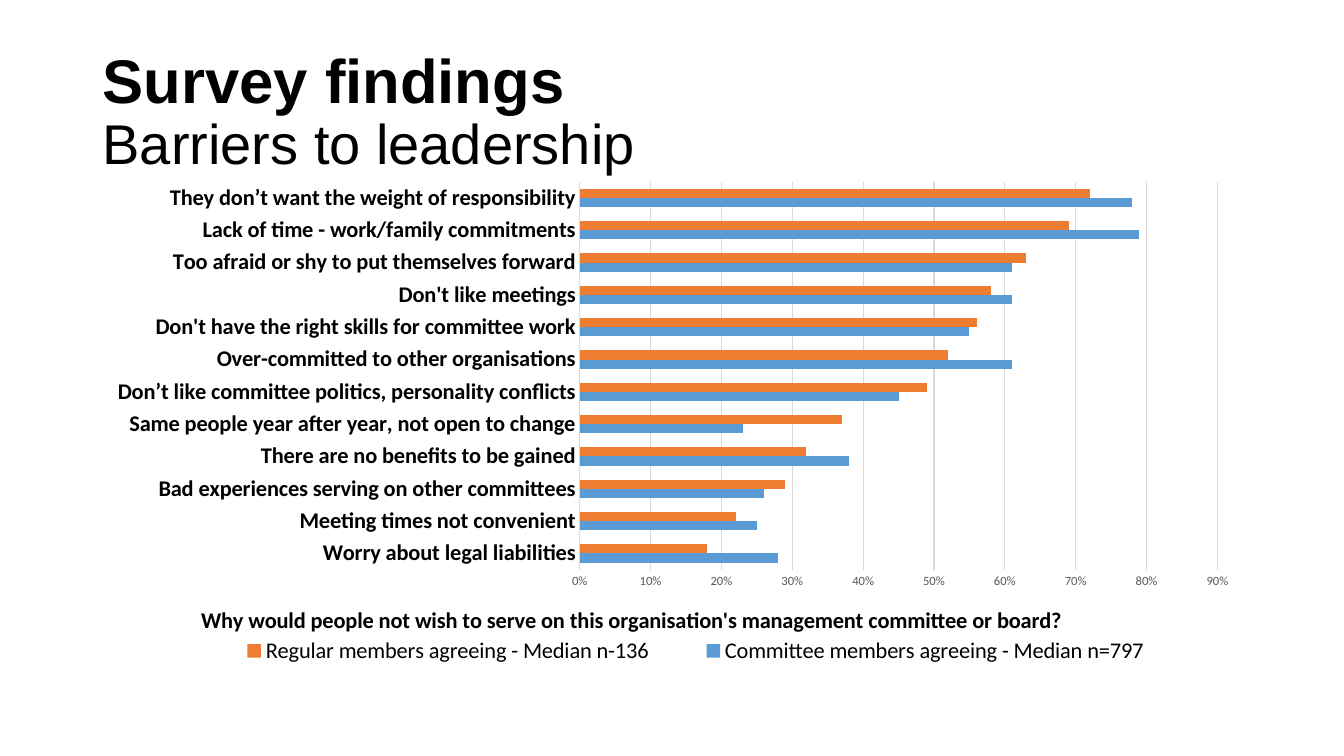
from dataclasses import dataclass

from lxml.etree import SubElement
from pptx import Presentation
from pptx.chart.data import CategoryChartData as ChartData
from pptx.dml.color import RGBColor
from pptx.enum.chart import XL_CHART_TYPE as ChartType
from pptx.enum.chart import XL_LEGEND_POSITION as LegendPosition
from pptx.enum.chart import XL_TICK_MARK as TickMark
from pptx.enum.text import MSO_ANCHOR as Anchor
from pptx.oxml.ns import qn
from pptx.util import Emu, Pt

EMU_PER_PX = 9144  # 100 px to the inch


@dataclass(frozen=True)
class Theme:
    heading_font: str = "Arial"
    chart_font: str = "Calibri"
    ink: str = "000000"
    muted: str = "595959"
    grid: str = "D9D9D9"
    committee: str = "5B9BD5"
    regular: str = "ED7D31"
    heading_size: int = 44
    subheading_size: int = 40
    label_size: int = 16
    base_size: int = 10
    scale_size: int = 9
    rule_width: float = 0.75


THEME = Theme()

QUESTION = ("Why would people not wish to serve on this organisation's "
            "management committee or board?")

# Barrier, committee members agreeing, regular members agreeing (bottom to top)
BARRIERS = [
    ("Worry about legal liabilities", 0.28, 0.18),
    ("Meeting times not convenient", 0.25, 0.22),
    ("Bad experiences serving on other committees", 0.26, 0.29),
    ("There are no benefits to be gained", 0.38, 0.32),
    ("Same people year after year, not open to change", 0.23, 0.37),
    ("Don’t like committee politics, personality conflicts", 0.45, 0.49),
    ("Over-committed to other organisations", 0.61, 0.52),
    ("Don't have the right skills for committee work", 0.55, 0.56),
    ("Don't like meetings", 0.61, 0.58),
    ("Too afraid or shy to put themselves forward", 0.61, 0.63),
    ("Lack of time - work/family commitments", 0.79, 0.69),
    ("They don’t want the weight of responsibility", 0.78, 0.72),
]


def px(*lengths):
    return [Emu(length * EMU_PER_PX) for length in lengths]


def style_font(font, size, color=THEME.ink, face=THEME.chart_font, bold=False):
    font.size, font.name, font.bold = Pt(size), face, bold
    font.color.rgb = RGBColor.from_string(color)


def add_text(paragraph, text, **style):
    run = paragraph.add_run()
    run.text = text
    style_font(run.font, **style)


def style_rule(line):
    line.color.rgb = RGBColor.from_string(THEME.grid)
    line.width = Pt(THEME.rule_width)


def place_part(chart, part, index, inner=False, **fractions):
    """Set a chart part's place as fractions of the chart area."""
    parent = chart.element.xpath(f".//{part}")[0]
    for automatic in parent.findall(qn("c:layout")):
        parent.remove(automatic)
    layout = parent.makeelement(qn("c:layout"))
    parent.insert(index, layout)
    manual = SubElement(layout, qn("c:manualLayout"))
    if inner:
        SubElement(manual, qn("c:layoutTarget")).set("val", "inner")
    for key in ("x", "y"):
        SubElement(manual, qn(f"c:{key}Mode")).set("val", "edge")
    for key, value in fractions.items():
        SubElement(manual, qn(f"c:{key}")).set("val", str(value))


def add_heading(slide):
    frame = slide.shapes.add_textbox(*px(92, 40, 1150, 145)).text_frame
    frame.word_wrap = True
    frame.vertical_anchor = Anchor.MIDDLE
    heading = frame.paragraphs[0]
    heading.line_spacing = 0.9
    add_text(heading, "Survey findings", size=THEME.heading_size,
             face=THEME.heading_font, bold=True)
    heading.add_line_break()
    add_text(heading, "Barriers to leadership", size=THEME.subheading_size,
             face=THEME.heading_font)


def add_barriers_chart(slide):
    labels, committee, regular = zip(*BARRIERS)
    data = ChartData(number_format="0%")
    data.categories = labels
    data.add_series("Committee members agreeing - Median n=797", committee)
    data.add_series("Regular members agreeing - Median n-136", regular)
    chart = slide.shapes.add_chart(
        ChartType.BAR_CLUSTERED, *px(92, 170, 1150, 520), data).chart
    chart.has_title = False
    style_font(chart.font, THEME.base_size)

    # Bars
    plot = chart.plots[0]
    plot.gap_width, plot.overlap, plot.vary_by_categories = 150, 0, False
    for series, color in zip(plot.series, (THEME.committee, THEME.regular)):
        series.format.fill.solid()
        series.format.fill.fore_color.rgb = RGBColor.from_string(color)
        series.invert_if_negative = False

    # Barrier axis
    barrier_axis = chart.category_axis
    barrier_axis.major_tick_mark = TickMark.NONE
    barrier_axis.has_major_gridlines = False
    style_rule(barrier_axis.format.line)
    style_font(barrier_axis.tick_labels.font, THEME.label_size, bold=True)

    # Agreement axis
    agreement_axis = chart.value_axis
    agreement_axis.minimum_scale, agreement_axis.maximum_scale = 0, 0.9
    agreement_axis.major_unit = 0.1
    agreement_axis.major_tick_mark = TickMark.NONE
    agreement_axis.format.line.fill.background()
    style_rule(agreement_axis.major_gridlines.format.line)
    scale_labels = agreement_axis.tick_labels
    scale_labels.number_format = "0%"
    scale_labels.number_format_is_linked = False
    style_font(scale_labels.font, THEME.scale_size, THEME.muted)
    question = agreement_axis.axis_title.text_frame.paragraphs[0]
    add_text(question, QUESTION, size=THEME.label_size, bold=True)

    # Legend
    chart.has_legend = True
    chart.legend.position = LegendPosition.BOTTOM
    chart.legend.include_in_layout = False
    style_font(chart.legend.font, THEME.label_size)

    # Places of the chart parts
    place_part(chart, "c:plotArea", 0, inner=True, x=0.42, y=0.02, w=0.55, h=0.74)
    place_part(chart, "c:valAx/c:title", 1, x=0.09, y=0.82)
    place_part(chart, "c:legend", 1, x=0.09, y=0.87, w=0.86, h=0.09)


def main():
    deck = Presentation()
    deck.slide_width, deck.slide_height = px(1333, 750)
    slide = deck.slides.add_slide(deck.slide_layouts[6])
    add_heading(slide)
    add_barriers_chart(slide)
    deck.save("out.pptx")


if __name__ == "__main__":
    main()
